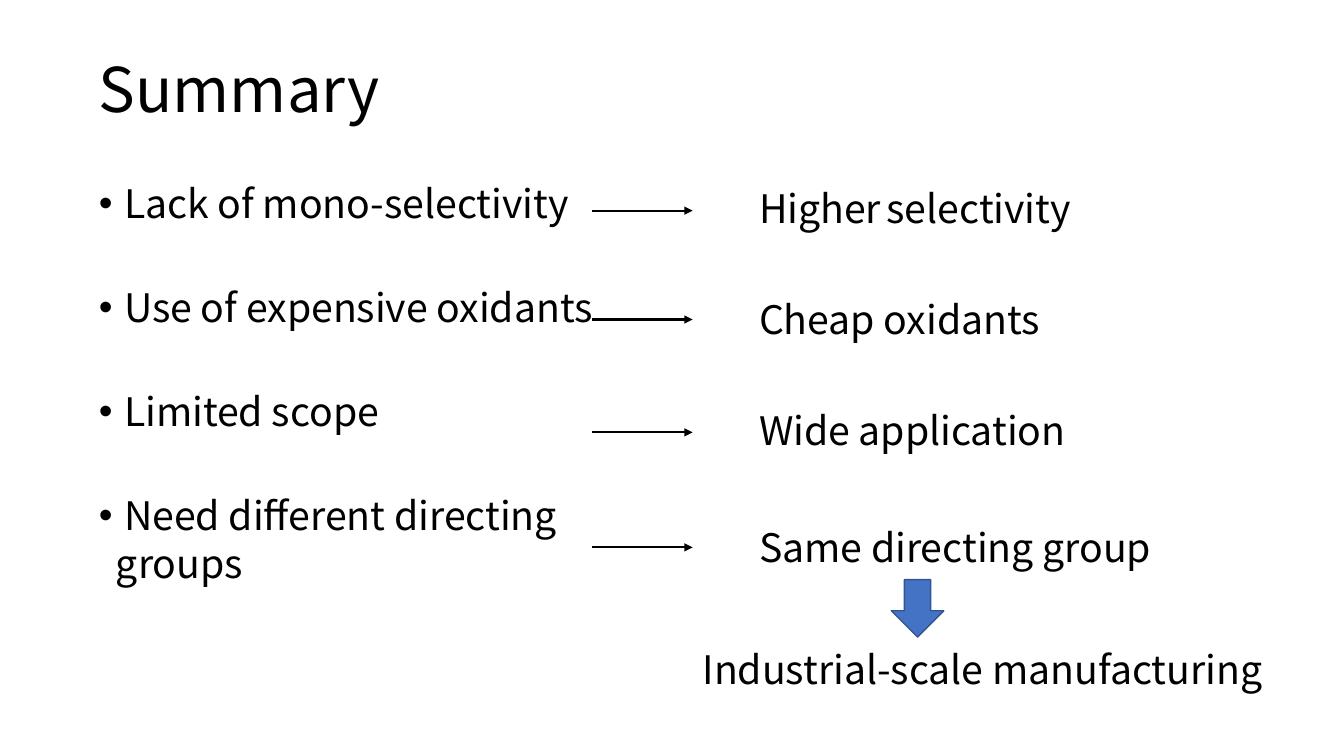
"""Build the summary slide: problems, arrows, improvements and the outcome."""
from lxml import etree
from pptx import Presentation
from pptx.dml.color import RGBColor
from pptx.enum.shapes import MSO_CONNECTOR as Connector, MSO_SHAPE as Shape
from pptx.enum.text import MSO_ANCHOR as Anchor, MSO_AUTO_SIZE as AutoSize, PP_ALIGN as Align
from pptx.oxml.ns import qn
from pptx.util import Inches, Pt

FONT = "Noto Sans CJK SC"
BLACK, BLUE, DARK_BLUE = "000000", "4472C4", "325491"

TITLE = "Summary"
# text, space before (pt), left margin, bulleted
PROBLEMS = [
    ("Lack of mono-selectivity", 0, 0.25, True),
    ("Use of expensive oxidants", 44, 0.25, True),
    ("Limited scope", 44, 0.25, True),
    ("Need different directing", 44, 0.25, True),
    ("groups", 4.2, 0.17, False),
]
# text pieces with sizes, left, top, width
ANSWERS = [
    ([("Higher", 28), (" ", 18), ("selectivity", 28)], 7.43, 1.78, 3.87),
    ([("Cheap oxidants", 28)], 7.43, 2.88, 3.87),
    ([("Wide application", 28)], 7.43, 3.98, 3.87),
    ([("Same directing group", 28)], 7.43, 5.14, 4.62),
    ([("Industrial-scale manufacturing", 28)], 6.87, 6.35, 5.75),
]
ARROW_LEFT, ARROW_RIGHT = 5.87, 6.87
ARROW_HEIGHTS = [2.09, 3.17, 4.29, 5.43]


def color(hex_code):
    return RGBColor.from_string(hex_code)


def style(paragraph, size):
    paragraph.font.name = FONT
    paragraph.font.size = Pt(size)
    paragraph.font.color.rgb = color(BLACK)


def place(part, left, top, width, height):
    part.left, part.top = Inches(left), Inches(top)
    part.width, part.height = Inches(width), Inches(height)


def add_title(slide):
    title = slide.shapes.title
    place(title, 0.88, 0.19, 11.5, 1.45)
    title.text_frame.text = TITLE
    title.text_frame.vertical_anchor = Anchor.MIDDLE
    heading = title.text_frame.paragraphs[0]
    heading.alignment = Align.LEFT
    heading.line_spacing = 0.9
    style(heading, 44)


def add_problems(slide):
    body = slide.placeholders[1]
    place(body, 0.88, 1.78, 5.75, 4.76)
    frame = body.text_frame
    frame.text = "\n".join(text for text, *_ in PROBLEMS)
    frame.auto_size = AutoSize.NONE
    for problem, (_, gap, margin, bulleted) in zip(frame.paragraphs, PROBLEMS):
        problem.line_spacing = 0.9
        problem.space_before = Pt(gap)
        properties = problem._p.get_or_add_pPr()
        properties.set("marL", str(Inches(margin)))
        properties.set("indent", str(Inches(-margin if bulleted else 0)))
        if bulleted:
            etree.SubElement(properties, qn("a:buFont"), typeface="Arial")
            etree.SubElement(properties, qn("a:buChar"), char="•")
        else:
            etree.SubElement(properties, qn("a:buNone"))
        style(problem, 28)


def add_arrow(slide, height):
    arrow = slide.shapes.add_connector(
        Connector.STRAIGHT, Inches(ARROW_LEFT), Inches(height), Inches(ARROW_RIGHT), Inches(height))
    arrow.line.color.rgb = color(BLACK)
    arrow.line.width = Pt(1.5)
    etree.SubElement(arrow.line._get_or_add_ln(), qn("a:tailEnd"), type="triangle")
    etree.SubElement(arrow._element.spPr, qn("a:effectLst"))


def add_answer(slide, pieces, left, top, width):
    answer = slide.shapes.add_textbox(Inches(left), Inches(top), Inches(width), Inches(0.57))
    answer.text_frame.word_wrap = True
    paragraph = answer.text_frame.paragraphs[0]
    style(paragraph, 28)
    for text, size in pieces:
        run = paragraph.add_run()
        run.text = text
        if size != 28:
            run.font.size = Pt(size)


def add_down_arrow(slide):
    down = slide.shapes.add_shape(
        Shape.DOWN_ARROW, Inches(8.84), Inches(5.75), Inches(0.52), Inches(0.57))
    down.shadow.inherit = False
    down.fill.solid()
    down.fill.fore_color.rgb = color(BLUE)
    down.line.color.rgb = color(DARK_BLUE)
    down.line.width = Pt(1)


def main():
    deck = Presentation()
    deck.slide_width, deck.slide_height = Inches(13.33), Inches(7.5)
    slide = deck.slides.add_slide(deck.slide_layouts[1])
    add_title(slide)
    add_problems(slide)
    for height in ARROW_HEIGHTS:
        add_arrow(slide, height)
    for answer in ANSWERS:
        add_answer(slide, *answer)
    add_down_arrow(slide)
    deck.save("out.pptx")


if __name__ == "__main__":
    main()
